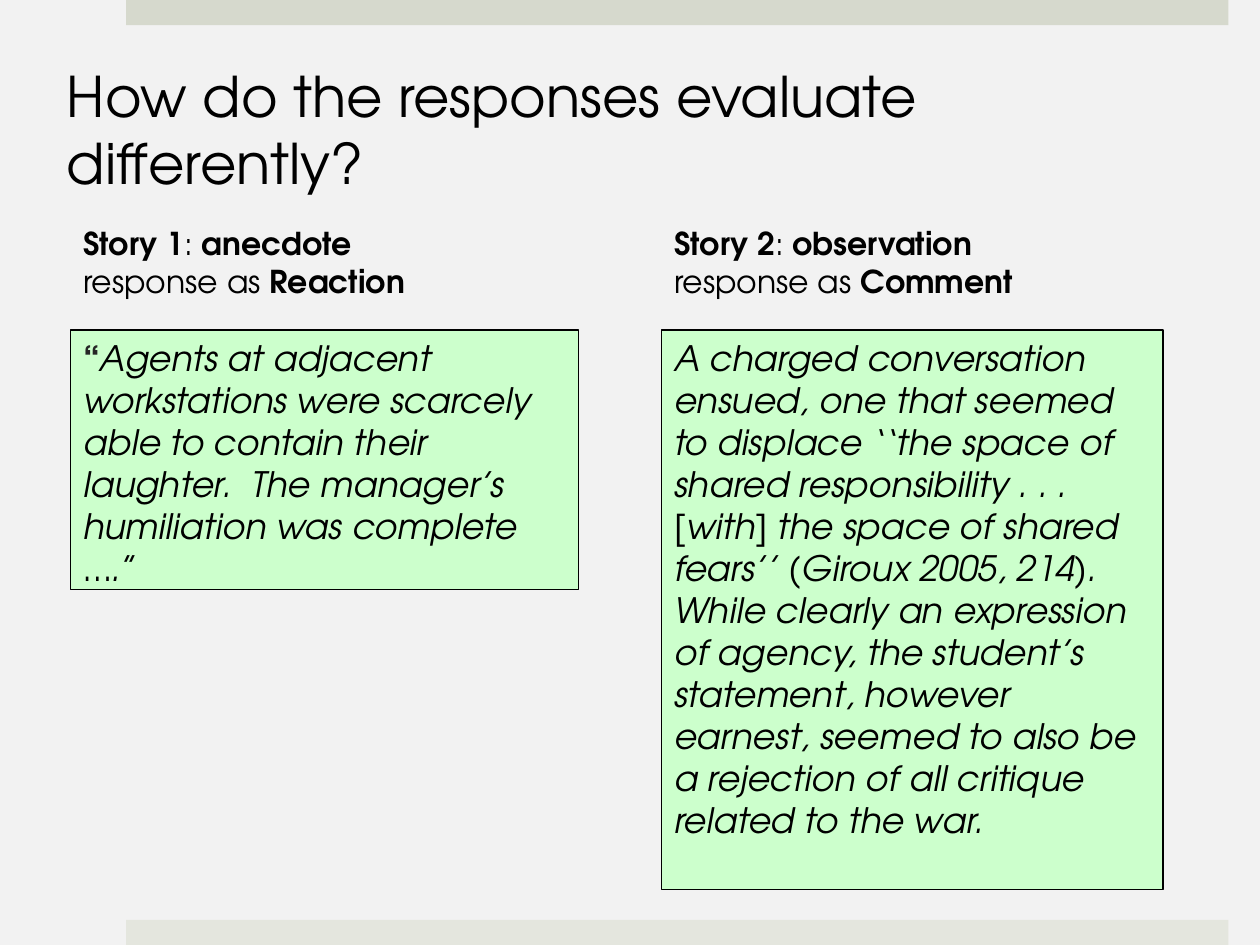
from lxml import etree
from pptx import Presentation
from pptx.dml.color import RGBColor
from pptx.enum.shapes import MSO_SHAPE
from pptx.enum.text import MSO_ANCHOR, MSO_AUTO_SIZE, PP_ALIGN
from pptx.oxml.ns import qn
from pptx.util import Inches, Pt

RECTANGLE = MSO_SHAPE.RECTANGLE
TOP = MSO_ANCHOR.TOP
LEFT = PP_ALIGN.LEFT
NO_AUTOFIT = MSO_AUTO_SIZE.NONE

FONT = "TeX Gyre Adventor"
BLACK = RGBColor(0x00, 0x00, 0x00)
CHARCOAL = RGBColor(0x26, 0x26, 0x26)
PAPER = RGBColor(0xF2, 0xF2, 0xF2)
TOP_BAND = RGBColor(0xD6, 0xD9, 0xCD)
BOTTOM_BAND = RGBColor(0xE4, 0xE6, 0xDE)
MINT = RGBColor(0xCC, 0xFF, 0xCC)

COMPARISON_LAYOUT = 4
BOLD = {"bold": True}
ITALIC = {"italic": True}
PLAIN = {}

STORIES = [
    {
        "heading": [
            [("Story 1", BOLD), (": ", PLAIN), ("anecdote", BOLD)],
            [("response as ", PLAIN), ("Reaction", BOLD)],
        ],
        "quote": [[
            ("“", {"bold": True, "color": CHARCOAL}),
            ("Agents at adjacent workstations were scarcely able to contain "
             "their laughter.  The manager’s humiliation was complete ….", ITALIC),
            ("”", PLAIN),
        ]],
        "left": 0.56, "quote_width": 4.03, "quote_height": 2.06,
    },
    {
        "heading": [
            [("Story 2", BOLD), (": ", PLAIN), ("observation", BOLD)],
            [("response as ", PLAIN), ("Comment", BOLD)],
        ],
        "quote": [[
            ("A charged conversation ensued, one that seemed to displace "
             "‘‘the space of shared responsibility . . . [with] the space of "
             "shared fears’’ (Giroux 2005, 214). While clearly an expression "
             "of agency, the student’s statement, however earnest, seemed to "
             "also be a rejection of all critique related to the war.", ITALIC),
        ]],
        "left": 5.25, "quote_width": 3.98, "quote_height": 4.44,
    },
]


def place(placeholder, left, top, width, height):
    """Move a placeholder to a box given in inches."""
    placeholder.left, placeholder.top = Inches(left), Inches(top)
    placeholder.width, placeholder.height = Inches(width), Inches(height)


def write(placeholder, paragraphs, size):
    """Fill a placeholder with unbulleted, left-aligned paragraphs of runs."""
    frame = placeholder.text_frame
    frame.word_wrap = True
    frame.auto_size = NO_AUTOFIT
    frame.vertical_anchor = TOP
    for index, pieces in enumerate(paragraphs):
        paragraph = frame.add_paragraph() if index else frame.paragraphs[0]
        paragraph.alignment = LEFT
        paragraph.space_before = Pt(0)
        properties = paragraph._p.get_or_add_pPr()
        properties.set("marL", "0")
        properties.set("indent", "0")
        etree.SubElement(properties, qn("a:buNone"))
        for words, style in pieces:
            run = paragraph.add_run()
            run.text = words
            run.font.name = FONT
            run.font.size = Pt(size)
            run.font.bold = style.get("bold", False)
            run.font.italic = style.get("italic", False)
            run.font.color.rgb = style.get("color", BLACK)


def add_band(slide, top, color):
    """Draw one decorative band along the slide edge."""
    band = slide.shapes.add_shape(
        RECTANGLE, Inches(1), Inches(top), Inches(8.75), Inches(0.2))
    band.shadow.inherit = False
    band.fill.solid()
    band.fill.fore_color.rgb = color
    band.line.fill.background()


def add_title(title, left, top, width, height):
    """Place the question at the head of the slide."""
    place(title, left, top, width, height)
    write(title, [[("How do the responses evaluate differently?", PLAIN)]], 32)


def add_story(heading, quote, story):
    """Place a story's heading above its framed quotation."""
    place(heading, story["left"], 1.73, 4.03, 0.71)
    write(heading, story["heading"], 18)
    place(quote, story["left"], 2.62, story["quote_width"], story["quote_height"])
    quote.fill.solid()
    quote.fill.fore_color.rgb = MINT
    quote.line.color.rgb = BLACK
    quote.line.width = Pt(0.75)
    write(quote, story["quote"], 20)


def main():
    """Build and save the slide."""
    deck = Presentation()
    deck.slide_width, deck.slide_height = Inches(10), Inches(7.5)
    slide = deck.slides.add_slide(deck.slide_layouts[COMPARISON_LAYOUT])
    slide.background.fill.solid()
    slide.background.fill.fore_color.rgb = PAPER
    title, *columns = slide.placeholders
    add_band(slide, 0, TOP_BAND)
    add_band(slide, 7.3, BOTTOM_BAND)
    add_title(title, 0.43, 0.44, 9.24, 0.64)
    for heading, quote, story in zip(columns[::2], columns[1::2], STORIES):
        add_story(heading, quote, story)
    deck.save("out.pptx")


if __name__ == "__main__":
    main()
